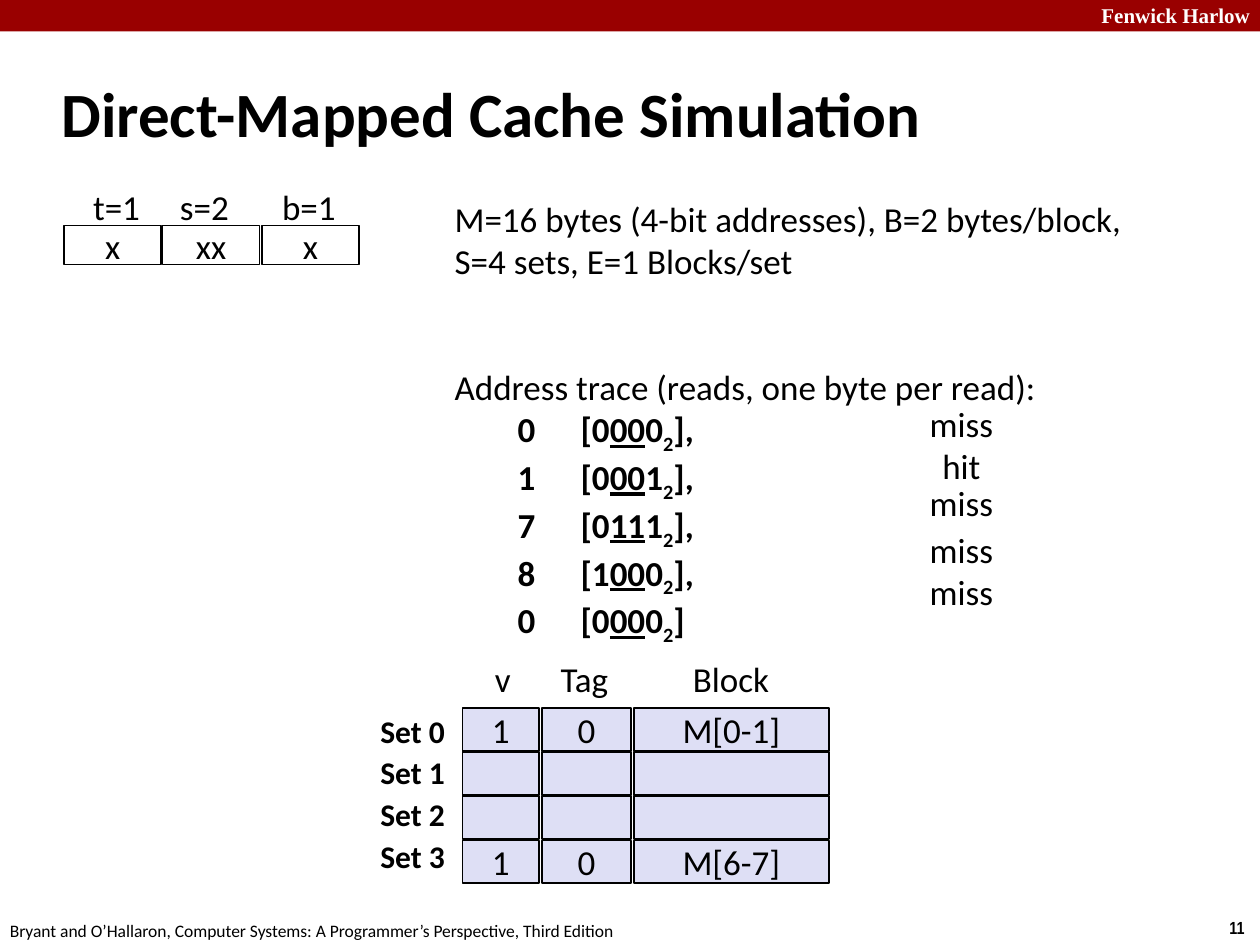
from typing import NamedTuple

from pptx import Presentation
from pptx.dml.color import RGBColor
from pptx.enum.shapes import MSO_SHAPE
from pptx.enum.text import MSO_ANCHOR, MSO_AUTO_SIZE, PP_ALIGN
from pptx.util import Emu, Pt

EMU_PER_PX = 9144  # 100 px to the inch
BLACK, WHITE, BANNER_RED, CELL_LILAC = "000000", "FFFFFF", "990000", "DEDFF5"


class Box(NamedTuple):
    left: int
    top: int
    width: int
    height: int


class Style(NamedTuple):
    size: int = 20
    font: str = "Calibri"
    color: str = BLACK
    bold: bool = False


class Label(NamedTuple):
    text: str
    box: Box
    style: Style = Style()
    wrap: bool = False
    align: PP_ALIGN = PP_ALIGN.LEFT
    line_spacing: float = 1.0


class Column(NamedTuple):
    heading: str
    heading_left: int
    heading_width: int
    cell_left: int
    cell_width: int


class Read(NamedTuple):
    address: str
    tag: str
    set_bits: str
    offset: str
    ending: str
    outcome: str
    outcome_left: int
    outcome_top: int
    outcome_width: int


BODY = Style()
BODY_BOLD = Style(bold=True)
SET_NAME = Style(18, bold=True)

ADDRESS_FIELDS = [
    Column("t=1", 64, 58, 51, 77),
    Column("s=2", 133, 59, 129, 77),
    Column("b=1", 214, 63, 208, 77),
]
ADDRESS_BITS = ["x", "xx", "x"]

CACHE_COLUMNS = [
    Column("v", 383, 34, 367, 61),
    Column("Tag", 435, 58, 430, 71),
    Column("Block", 540, 81, 503, 155),
]
CACHE_SETS = [
    ["1", "0", "M[0-1]"],
    ["", "", ""],
    ["", "", ""],
    ["1", "0", "M[6-7]"],
]

READS = [
    Read("0", "0", "00", "0", "],", "miss", 728, 325, 71),
    Read("1", "0", "00", "1", "],", "hit", 738, 358, 51),
    Read("7", "0", "11", "1", "],", "miss", 728, 388, 71),
    Read("8", "1", "00", "0", "],", "miss", 728, 425, 71),
    Read("0", "0", "00", "0", "]", "miss", 728, 458, 71),
]


def px(length: int) -> Emu:
    return Emu(length * EMU_PER_PX)


def rgb(color: str) -> RGBColor:
    return RGBColor.from_string(color)


def add_run(paragraph, text: str, style: Style):
    run = paragraph.add_run()
    run.text = text
    font = run.font
    font.name, font.size, font.bold = style.font, Pt(style.size), style.bold
    font.color.rgb = rgb(style.color)
    return run


def add_frame(slide, box: Box, wrap: bool):
    frame = slide.shapes.add_textbox(*map(px, box)).text_frame
    frame.word_wrap = wrap
    frame.auto_size = MSO_AUTO_SIZE.SHAPE_TO_FIT_TEXT
    return frame


def add_label(slide, label: Label):
    frame = add_frame(slide, label.box, label.wrap)
    paragraph = frame.paragraphs[0]
    paragraph.alignment = label.align
    paragraph.line_spacing = label.line_spacing
    add_run(paragraph, label.text, label.style)
    return frame


def add_cell(slide, box: Box, fill: str, text: str = "", outlined: bool = True) -> None:
    cell = slide.shapes.add_shape(MSO_SHAPE.RECTANGLE, *map(px, box))
    cell.shadow.inherit = False
    cell.fill.solid()
    cell.fill.fore_color.rgb = rgb(fill)
    if outlined:
        cell.line.color.rgb = rgb(BLACK)
        cell.line.width = Pt(1)
    else:
        cell.line.fill.background()
    if text:
        frame = cell.text_frame
        frame.word_wrap = False
        frame.vertical_anchor = MSO_ANCHOR.MIDDLE
        frame.paragraphs[0].alignment = PP_ALIGN.CENTER
        add_run(frame.paragraphs[0], text, BODY)


def add_headings(slide, columns: list[Column], top: int) -> None:
    for column in columns:
        box = Box(column.heading_left, top, column.heading_width, 43)
        add_label(slide, Label(column.heading, box))


def add_row(slide, columns: list[Column], texts: list[str], top: int, height: int, fill: str) -> None:
    for column, text in zip(columns, texts):
        add_cell(slide, Box(column.cell_left, top, column.cell_width, height), fill, text)


def add_trace(slide) -> None:
    frame = add_frame(slide, Box(351, 152, 674, 346), wrap=True)
    add_run(frame.paragraphs[0], "M=16 bytes (4-bit addresses), B=2 bytes/block,", BODY)
    add_run(frame.add_paragraph(), "S=4 sets, E=1 Blocks/set", BODY)
    intro = frame.add_paragraph()
    intro.space_before = Pt(48)
    add_run(intro, "Address trace (reads, one byte per read):", BODY)
    for read in READS:
        line = frame.add_paragraph()
        add_run(line, f"\t{read.address}\t[{read.tag}", BODY_BOLD)
        add_run(line, read.set_bits, BODY_BOLD).font.underline = True
        add_run(line, read.offset, BODY_BOLD)
        subscript = add_run(line, "2", BODY_BOLD)
        subscript.font._element.set("baseline", "-25000")
        add_run(line, read.ending, BODY_BOLD)


def main() -> None:
    deck = Presentation()
    deck.slide_width, deck.slide_height = px(1000), px(750)
    slide = deck.slides.add_slide(deck.slide_layouts[6])

    # Banner and footer
    add_cell(slide, Box(0, 0, 1000, 25), BANNER_RED, outlined=False)
    add_label(slide, Label("Fenwick Harlow", Box(864, -3, 138, 30),
                           Style(12, "Times New Roman", WHITE, True), True, PP_ALIGN.RIGHT))
    add_label(slide, Label("11", Box(966, 723, 34, 27), Style(10, "Arial Narrow", bold=True)))
    add_label(slide, Label(
        "Bryant and O’Hallaron, Computer Systems: A Programmer’s Perspective, Third Edition",
        Box(-2, 725, 508, 27), Style(10)))

    # Title
    title = add_label(slide, Label("Direct-Mapped Cache Simulation", Box(39, 48, 830, 83),
                                   Style(36, bold=True), True))
    title.auto_size = MSO_AUTO_SIZE.NONE
    title.vertical_anchor = MSO_ANCHOR.MIDDLE

    # Address layout
    add_row(slide, ADDRESS_FIELDS, ADDRESS_BITS, 179, 31, WHITE)
    add_headings(slide, ADDRESS_FIELDS, 142)

    # Address trace with its outcomes
    add_trace(slide)
    for read in READS:
        box = Box(read.outcome_left, read.outcome_top, read.outcome_width, 34)
        add_label(slide, Label(read.outcome, box, line_spacing=0.65))

    # Cache contents
    add_headings(slide, CACHE_COLUMNS, 517)
    for index, contents in enumerate(CACHE_SETS):
        add_row(slide, CACHE_COLUMNS, contents, 562 + 35 * index, 34, CELL_LILAC)
        add_label(slide, Label(f"Set {index}", Box(292, 560 + 33 * index, 72, 40), SET_NAME))

    deck.save("out.pptx")


if __name__ == "__main__":
    main()
